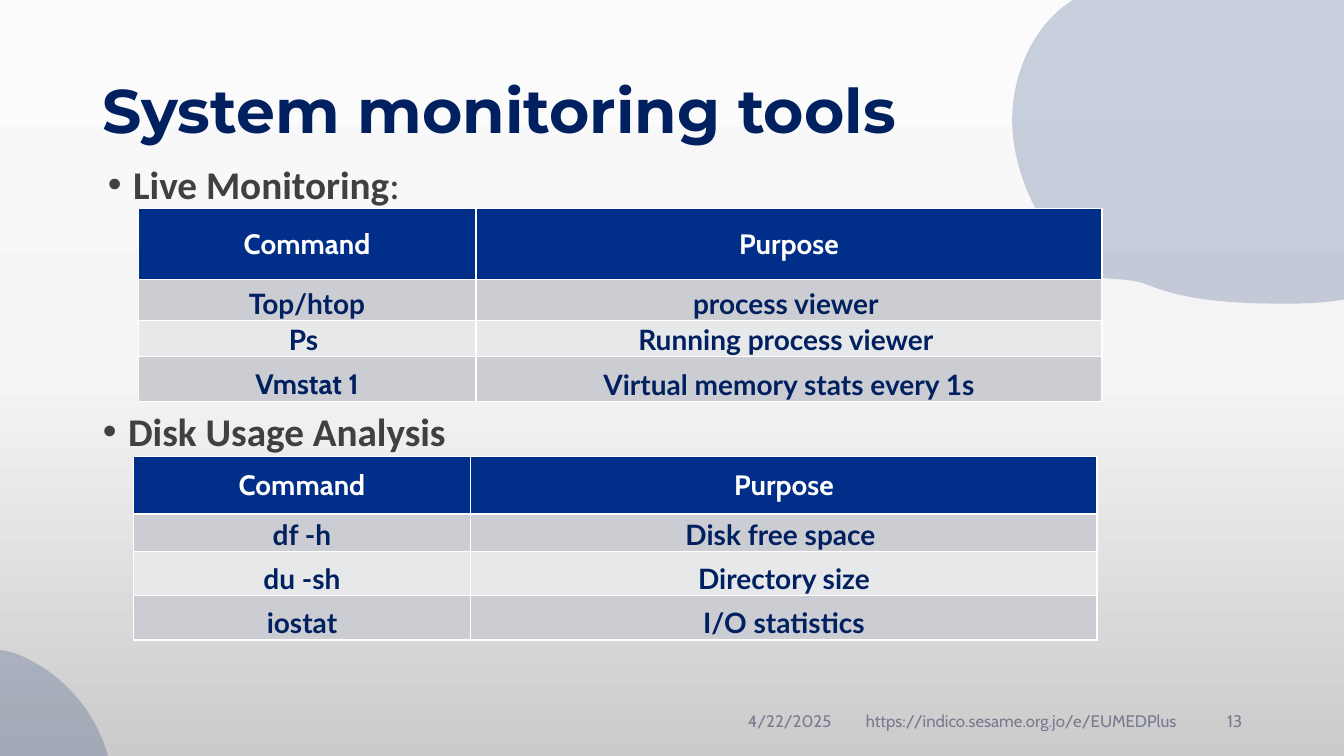
from copy import deepcopy

from lxml.etree import SubElement
from pptx import Presentation
from pptx.dml.color import RGBColor
from pptx.enum.text import MSO_ANCHOR, MSO_AUTO_SIZE, PP_ALIGN
from pptx.oxml.ns import qn
from pptx.util import Inches, Pt

NAVY, HEADER, WHITE = "002060", "002E89", "FFFFFF"
BODY, FOOTER = "404040", "797B90"
BANDS = ("CCCDD2", "E7E8EA")
COLUMNS = (3.35, 6.21)
UNITS = 100  # outline units per inch

# Blobs: box, start point, then cubic curves (two controls and an end)
TOP_BLOB = ((10.04, -0.76, 4.57, 3.78), (10.73, 2.73), [
    (10.36, 2.31, 10.06, 1.8, 10.04, 1.24), (10.02, 0.68, 10.32, 0.08, 10.85, -0.1),
    (11.21, -0.23, 11.6, -0.16, 11.96, -0.29), (12.35, -0.43, 12.67, -0.79, 13.09, -0.76),
    (13.22, -0.75, 13.34, -0.7, 13.46, -0.64), (13.94, -0.39, 14.32, 0.05, 14.5, 0.56),
    (14.67, 1.08, 14.64, 1.66, 14.4, 2.15), (14.3, 2.37, 14.15, 2.57, 13.95, 2.72),
    (13.55, 3.02, 13.01, 3.02, 12.51, 3.01), (12.13, 3, 11.73, 2.97, 11.37, 2.82),
    (11.2, 2.75, 10.91, 2.78, 10.73, 2.73)])
BOTTOM_BLOB = ((-2.24, 6.45, 3.36, 2.69), (-1.73, 8.95), [
    (-2, 8.64, -2.22, 8.28, -2.24, 7.88), (-2.26, 7.48, -2.03, 7.05, -1.64, 6.92),
    (-1.38, 6.83, -1.09, 6.88, -0.83, 6.79), (-0.54, 6.69, -0.3, 6.43, 0, 6.45),
    (0.1, 6.46, 0.19, 6.49, 0.28, 6.54), (0.63, 6.71, 0.91, 7.03, 1.04, 7.4),
    (1.17, 7.76, 1.14, 8.18, 0.97, 8.53), (0.89, 8.68, 0.78, 8.83, 0.64, 8.93),
    (0.34, 9.15, -0.05, 9.15, -0.42, 9.14), (-0.7, 9.13, -1, 9.12, -1.26, 9.01),
    (-1.38, 8.95, -1.6, 8.98, -1.73, 8.95)])

LIVE_TOOLS = [("Top/htop", "process viewer "), ("Ps ", "Running process viewer "),
              ("Vmstat 1", "Virtual memory stats every 1s")]
DISK_TOOLS = [("df -h", "Disk free space "), ("du -sh", "Directory size"),
              ("iostat", "I/O statistics")]


def color(hex_string):
    return RGBColor.from_string(hex_string)


def place(shape, box):
    shape.left, shape.top, shape.width, shape.height = map(Inches, box)


def add_run(paragraph, text, size, font_name, hex_string, bold=False):
    run = paragraph.add_run()
    run.text = text
    run.font.size, run.font.name, run.font.bold = Pt(size), font_name, bold
    run.font.color.rgb = color(hex_string)


def fill_background(slide):
    fill = slide.background.fill
    fill.gradient()
    fill.gradient_angle = 270
    stop_list = slide.element.find(".//" + qn("a:gsLst"))
    stop_list.insert(1, deepcopy(stop_list[0]))
    stops = zip(fill.gradient_stops, (0, 0.5, 1), ("FBFBFB", "F4F4F4", "CBCBCB"))
    for stop, position, hex_string in stops:
        stop.position = position
        stop.color.rgb = color(hex_string)


def add_blob(slide, box, start, curves):
    builder = slide.shapes.build_freeform(
        *(round(value * UNITS) for value in start), scale=Inches(1) / UNITS)
    builder.add_line_segments(
        [(round(x * UNITS), round(y * UNITS)) for *_, x, y in curves])
    blob = builder.convert_to_shape()
    place(blob, box)
    left, top, width, height = box
    # Turn each straight segment into its curve
    outline = blob.element.spPr.find(".//" + qn("a:path"))
    outline.set("w", str(round(width * UNITS)))
    outline.set("h", str(round(height * UNITS)))
    for segment, curve in zip(outline.findall(qn("a:lnTo")), curves):
        bezier = SubElement(outline, qn("a:cubicBezTo"))
        for x, y in zip(curve[::2], curve[1::2]):
            SubElement(bezier, qn("a:pt"), x=str(round((x - left) * UNITS)),
                       y=str(round((y - top) * UNITS)))
        outline.replace(segment, bezier)
    blob.shadow.inherit = False
    blob.fill.solid()
    blob.fill.fore_color.rgb = color(NAVY)
    fill_color = blob.element.spPr.find(".//" + qn("a:srgbClr"))
    SubElement(fill_color, qn("a:alpha"), val="20000")
    blob.line.fill.background()
    # Send behind the placeholders
    slide.shapes.element.insert(2, blob.element)


def set_title(slide, box):
    title = slide.shapes.title
    place(title, box)
    frame = title.text_frame
    frame.auto_size, frame.vertical_anchor = MSO_AUTO_SIZE.NONE, MSO_ANCHOR.MIDDLE
    paragraph = frame.paragraphs[0]
    paragraph.alignment, paragraph.line_spacing = PP_ALIGN.LEFT, 0.9
    add_run(paragraph, "System monitoring tools", 44, "Montserrat", NAVY, True)


def set_heading(placeholder, box, text, suffix=""):
    place(placeholder, box)
    frame = placeholder.text_frame
    frame.auto_size, frame.vertical_anchor = MSO_AUTO_SIZE.NONE, MSO_ANCHOR.TOP
    paragraph = frame.paragraphs[0]
    paragraph.line_spacing, paragraph.space_before = 0.9, Pt(0)
    properties = paragraph._p.get_or_add_pPr()
    properties.set("marL", str(Inches(0.25)))
    properties.set("indent", str(Inches(-0.25)))
    SubElement(properties, qn("a:buFont"), typeface="Arial")
    SubElement(properties, qn("a:buChar"), char="•")
    add_run(paragraph, text, 28, "Calibri", BODY, True)
    if suffix:
        add_run(paragraph, suffix, 28, "Calibri", BODY)


def set_borders(cell):
    properties = cell._tc.get_or_add_tcPr()
    for index, tag in enumerate(("a:lnL", "a:lnR", "a:lnT", "a:lnB")):
        border = SubElement(properties, qn(tag), w=str(Pt(1)))
        SubElement(SubElement(border, qn("a:solidFill")), qn("a:srgbClr"), val=WHITE)
        properties.insert(index, border)


def add_tool_table(slide, left, top, row_heights, tools):
    frame = slide.shapes.add_table(
        len(row_heights), len(COLUMNS), Inches(left), Inches(top),
        Inches(sum(COLUMNS)), Inches(sum(row_heights)))
    table = frame.table
    for column, width in zip(table.columns, COLUMNS):
        column.width = Inches(width)
    for row, height in zip(table.rows, row_heights):
        row.height = Inches(height)
    for row_index, texts in enumerate([("Command", "Purpose")] + tools):
        is_header = row_index == 0
        for column_index, text in enumerate(texts):
            cell = table.cell(row_index, column_index)
            cell.margin_left = cell.margin_right = cell.margin_top = Inches(0.01)
            cell.margin_bottom = 0
            cell.vertical_anchor = MSO_ANCHOR.MIDDLE if is_header else MSO_ANCHOR.BOTTOM
            cell.fill.solid()
            cell.fill.fore_color.rgb = color(HEADER if is_header else BANDS[(row_index - 1) % 2])
            set_borders(cell)
            paragraph = cell.text_frame.paragraphs[0]
            paragraph.alignment = PP_ALIGN.CENTER
            font_name = "Cabin" if is_header or text == "Vmstat 1" else "Lato"
            add_run(paragraph, text, 20, font_name, WHITE if is_header else NAVY, True)


def add_footer(slide, top, height):
    parts = [("4/22/2025", 7.32, 1.07, PP_ALIGN.LEFT),
             ("https://indico.sesame.org.jo/e/EUMEDPlus", 8.43, 3.4, PP_ALIGN.CENTER),
             ("13", 11.99, 0.43, PP_ALIGN.RIGHT)]
    for text, left, width, alignment in parts:
        box = slide.shapes.add_textbox(*map(Inches, (left, top, width, height)))
        frame = box.text_frame
        frame.word_wrap, frame.vertical_anchor = True, MSO_ANCHOR.MIDDLE
        frame.paragraphs[0].alignment = alignment
        add_run(frame.paragraphs[0], text, 12, "Cabin", FOOTER)


def main():
    presentation = Presentation()
    presentation.slide_width, presentation.slide_height = Inches(13.33), Inches(7.5)
    # The two-content layout offers a title and two body placeholders
    slide = presentation.slides.add_slide(presentation.slide_layouts[3])
    fill_background(slide)
    for blob in (BOTTOM_BLOB, TOP_BLOB):
        add_blob(slide, *blob)
    set_title(slide, (0.92, 0.4, 11.5, 1.45))
    # Live monitoring
    set_heading(slide.placeholders[1], (0.97, 1.59, 5.83, 4.76), "Live Monitoring", ":")
    add_tool_table(slide, 1.37, 2.07, (0.7, 0.41, 0.36, 0.44), LIVE_TOOLS)
    # Disk usage
    set_heading(slide.placeholders[2], (0.92, 4.04, 5.83, 4.76), "Disk Usage Analysis")
    add_tool_table(slide, 1.32, 4.53, (0.57, 0.37, 0.44, 0.44), DISK_TOOLS)
    add_footer(slide, 6.95, 0.4)
    presentation.save("out.pptx")


if __name__ == "__main__":
    main()
